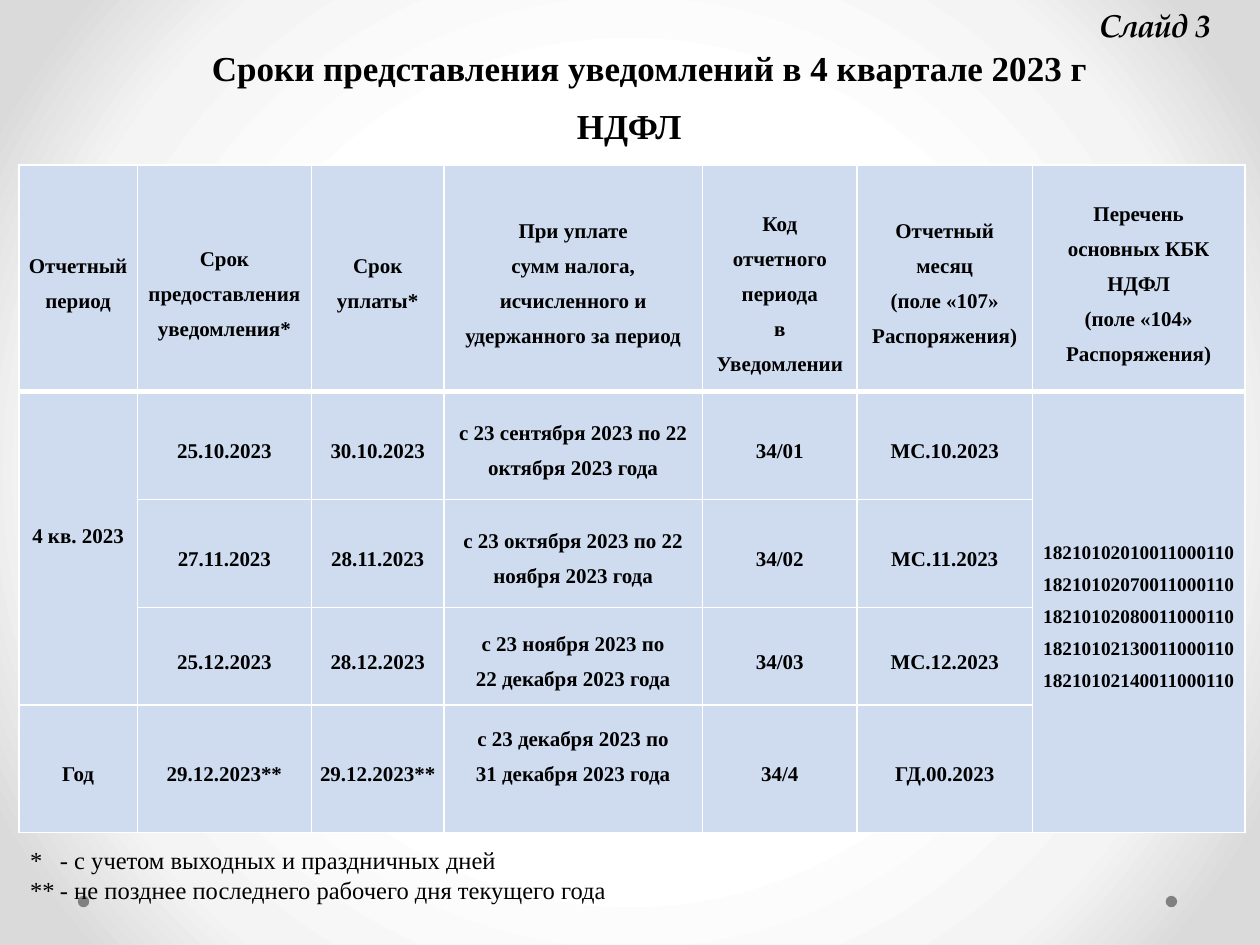
import lxml.etree
import pptx
import pptx.dml.color
import pptx.enum.shapes
import pptx.enum.text
import pptx.oxml
import pptx.oxml.ns
import pptx.util

Cm, Pt = pptx.util.Cm, pptx.util.Pt
RGBColor = pptx.dml.color.RGBColor
ALIGN = pptx.enum.text.PP_ALIGN
ANCHOR = pptx.enum.text.MSO_ANCHOR

BLACK = RGBColor(0x00, 0x00, 0x00)
WHITE = RGBColor(0xFF, 0xFF, 0xFF)
GREY = RGBColor(0x80, 0x80, 0x80)
PALE_BLUE = RGBColor(0xCF, 0xDC, 0xF0)
BACKDROP = [(50, WHITE), (76, RGBColor(0xF4, 0xF4, 0xF4)), (92, RGBColor(0xDA, 0xDA, 0xDA))]
SERIF, PAGELLA = "Times New Roman", "TeX Gyre Pagella"

# Content: place is left, top, width, height in cm
DOTS = [(23.5, 18.06), (1.57, 18.06)]
DOT_SIZE = 0.23
BOLD = {"name": SERIF, "size": Pt(20), "bold": True}
TEXTS = [
    {"place": (0.05, 0.81, 24.87, 1.12), "font": BOLD, "align": ALIGN.CENTER,
     "anchor": ANCHOR.MIDDLE, "left": 1.47,
     "text": "Сроки представления уведомлений в 4 квартале 2023 г"},
    {"place": (0.48, 1.98, 24.41, 1.12), "font": BOLD, "align": ALIGN.CENTER,
     "text": "НДФЛ"},
    {"place": (0.36, 16.92, 12.65, 1.45), "font": {"name": SERIF, "size": Pt(14)},
     "hanging": 0.6,
     "text": "*\t- с учетом выходных и праздничных дней\n"
             "**\t- не позднее последнего рабочего дня текущего года"},
    {"place": (21.92, 0, 2.97, 1.02), "wrap": False,
     "font": {"name": PAGELLA, "size": Pt(18), "bold": True, "italic": True},
     "text": "Слайд 3"},
]

TABLE_PLACE = (0.38, 3.33)
COLUMNS = [2.39, 3.51, 2.67, 5.21, 3.12, 3.53, 4.29]
ROWS = [4.56, 2.18, 2.18, 1.96, 2.57]
CELLS = [
    ["Отчетный\nпериод", "Срок предоставления уведомления*", "Срок\nуплаты*",
     "При уплате\nсумм налога, исчисленного и удержанного за период",
     "Код\nотчетного периода\nв Уведомлении",
     "Отчетный\nмесяц\n(поле «107»\nРаспоряжения)",
     "Перечень\nосновных КБК НДФЛ\n(поле «104»\nРаспоряжения)"],
    ["4 кв. 2023", "25.10.2023", "30.10.2023",
     "с 23 сентября 2023 по 22 октября 2023 года", "34/01", "МС.10.2023",
     "18210102010011000110\n18210102070011000110\n18210102080011000110\n"
     "18210102130011000110\n18210102140011000110"],
    ["", "27.11.2023", "28.11.2023",
     "с 23 октября 2023 по 22 ноября 2023 года", "34/02", "МС.11.2023", ""],
    ["", "25.12.2023", "28.12.2023",
     "с 23 ноября 2023 по\n22 декабря 2023 года", "34/03", "МС.12.2023", ""],
    ["Год", "29.12.2023**", "29.12.2023**",
     "с 23 декабря 2023 по\n31 декабря 2023 года", "34/4", "ГД.00.2023", ""],
]
MERGES = [((1, 0), (3, 0)), ((1, 6), (4, 6))]
# Extra inset (top, bottom) that moves the text of single cells
SHIFTS = {(0, 1): (0.4, 0), (0, 4): (0.4, 0), (1, 0): (0, 0.72), (4, 3): (0, 0.7)}
SMALL_CELL = (1, 6)


def apply(target, values):
    for name, value in values.items():
        setattr(target, name, value)


def write(frame, text, font, align=ALIGN.LEFT, spacing=None):
    for number, line in enumerate(text.split("\n")):
        para = frame.paragraphs[0] if number == 0 else frame.add_paragraph()
        apply(para, {"alignment": align, "line_spacing": spacing})
        span = para.add_run()
        span.text = line
        apply(span.font, font)
        span.font.color.rgb = BLACK


def set_backdrop(page):
    stops = "".join(f'<a:gs pos="{pos * 1000}"><a:srgbClr val="{color}"/></a:gs>'
                    for pos, color in BACKDROP)
    page.background.fill.solid()
    solid = page.background.fill._xPr.find(pptx.oxml.ns.qn("a:solidFill"))
    gradient = pptx.oxml.parse_xml(
        f'<a:gradFill {pptx.oxml.ns.nsdecls("a")} rotWithShape="1"><a:gsLst>{stops}</a:gsLst>'
        '<a:path path="circle"><a:fillToRect l="50000" t="50000" r="50000" b="50000"/>'
        '</a:path></a:gradFill>')
    solid.getparent().replace(solid, gradient)


def add_dot(page, left, top):
    dot = page.shapes.add_shape(pptx.enum.shapes.MSO_SHAPE.OVAL,
                                Cm(left), Cm(top), Cm(DOT_SIZE), Cm(DOT_SIZE))
    dot.shadow.inherit = False
    dot.fill.solid()
    dot.fill.fore_color.rgb = GREY
    dot.line.fill.background()


def add_text(page, item):
    frame = page.shapes.add_textbox(*map(Cm, item["place"])).text_frame
    apply(frame, {"word_wrap": item.get("wrap", True),
                  "vertical_anchor": item.get("anchor", ANCHOR.TOP),
                  "margin_left": Cm(item.get("left", 0.25))})
    write(frame, item["text"], item["font"], item.get("align", ALIGN.LEFT))
    if "hanging" in item:
        indent = Cm(item["hanging"])
        for para in frame.paragraphs:
            apply_to = para._p.get_or_add_pPr()
            apply_to.set("marL", str(indent))
            apply_to.set("indent", str(-indent))


def set_borders(cell, row):
    widths = {"L": 1, "R": 1, "T": 3 if row == 1 else 1, "B": 3 if row == 0 else 1}
    properties = cell._tc.get_or_add_tcPr()
    for side, width in widths.items():
        properties.append(pptx.oxml.parse_xml(
            f'<a:ln{side} {pptx.oxml.ns.nsdecls("a")} w="{Pt(width)}"><a:solidFill>'
            f'<a:srgbClr val="{WHITE}"/></a:solidFill></a:ln{side}>'))


def add_schedule(page):
    table = page.shapes.add_table(len(ROWS), len(COLUMNS), *map(Cm, TABLE_PLACE),
                                  Cm(sum(COLUMNS)), Cm(sum(ROWS))).table
    for column, width in zip(table.columns, COLUMNS):
        column.width = Cm(width)
    for row, height in zip(table.rows, ROWS):
        row.height = Cm(height)
    for start, end in MERGES:
        table.cell(*start).merge(table.cell(*end))
    for row, texts in enumerate(CELLS):
        for column, text in enumerate(texts):
            cell = table.cell(row, column)
            top, bottom = SHIFTS.get((row, column), (0, 0))
            apply(cell, {"margin_left": Cm(0.15), "margin_right": Cm(0.15),
                         "margin_top": Cm(top), "margin_bottom": Cm(bottom),
                         "vertical_anchor": ANCHOR.MIDDLE})
            set_borders(cell, row)
            cell.fill.solid()
            cell.fill.fore_color.rgb = PALE_BLUE
            if text:
                size = Pt(11 if (row, column) == SMALL_CELL else 12)
                write(cell.text_frame, text, {"name": SERIF, "size": size, "bold": True},
                      ALIGN.CENTER, 1.5)


def main():
    deck = pptx.Presentation()
    apply(deck, {"slide_width": Cm(25.4), "slide_height": Cm(19.05)})
    page = deck.slides.add_slide(deck.slide_layouts[6])
    set_backdrop(page)
    for left, top in DOTS:
        add_dot(page, left, top)
    for item in TEXTS:
        add_text(page, item)
    add_schedule(page)
    deck.save("out.pptx")


if __name__ == "__main__":
    main()
